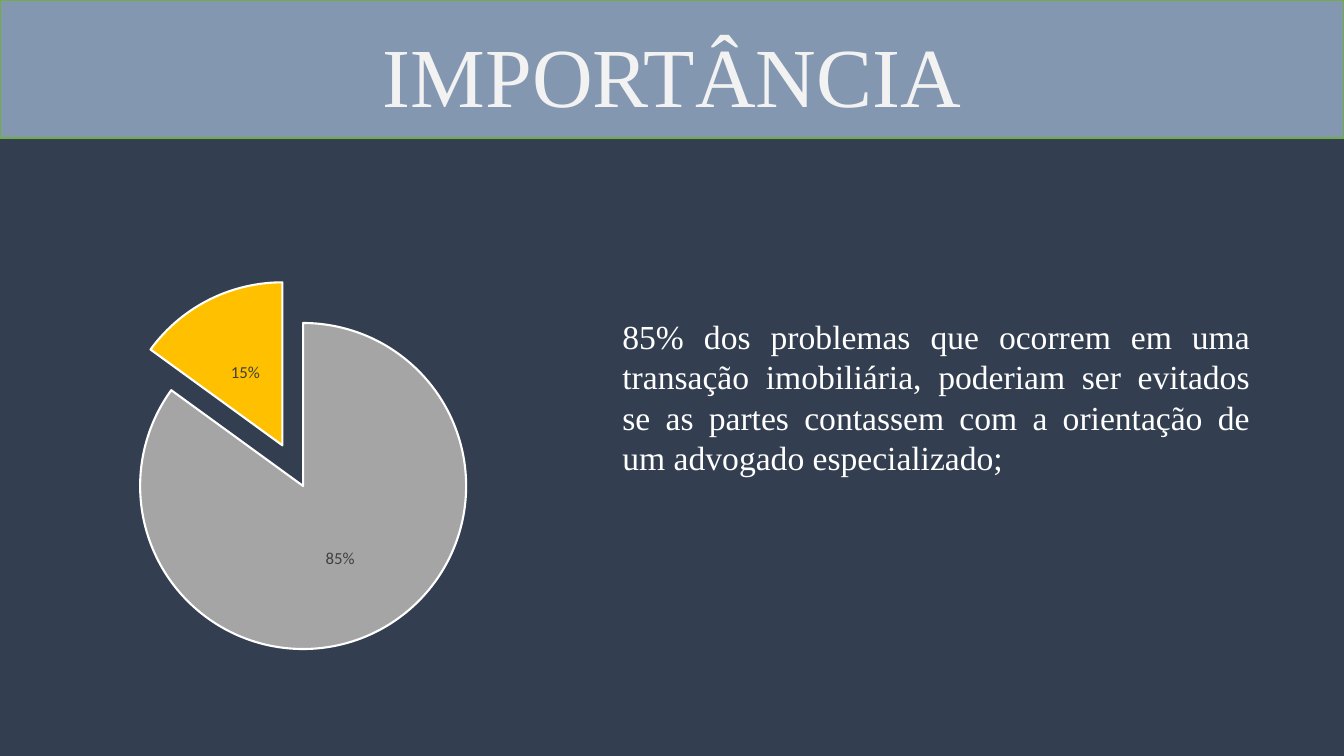
"""Build the IMPORTÂNCIA slide with a title band, an exploded pie and a statement."""
import pptx
import pptx.chart.data
import pptx.dml.color
import pptx.enum.chart
import pptx.enum.shapes
import pptx.enum.text
import pptx.util

Pt = pptx.util.Pt
RGBColor = pptx.dml.color.RGBColor
ALIGN = pptx.enum.text.PP_ALIGN
ANCHOR = pptx.enum.text.MSO_ANCHOR

NAVY = RGBColor(0x33, 0x3F, 0x50)
SLATE = RGBColor(0x84, 0x97, 0xB0)
GREEN = RGBColor(0x70, 0xAD, 0x47)
PALE = RGBColor(0xF2, 0xF2, 0xF2)
WHITE = RGBColor(0xFF, 0xFF, 0xFF)
LABEL_GREY = RGBColor(0x40, 0x40, 0x40)
BLUE = RGBColor(0x44, 0x72, 0xC4)
ORANGE = RGBColor(0xED, 0x7D, 0x31)
GREY = RGBColor(0xA5, 0xA5, 0xA5)
GOLD = RGBColor(0xFF, 0xC0, 0x00)


def write_text(shape, text, size, color, align, anchor, line_spacing=1.0):
    frame = shape.text_frame
    frame.word_wrap = True
    frame.auto_size = pptx.enum.text.MSO_AUTO_SIZE.NONE
    frame.vertical_anchor = anchor
    paragraph = frame.paragraphs[0]
    paragraph.alignment = align
    paragraph.line_spacing = line_spacing
    run = paragraph.add_run()
    run.text = text
    run.font.name = "Times New Roman"
    run.font.size = Pt(size)
    run.font.color.rgb = color


presentation = pptx.Presentation()
presentation.slide_width = Pt(960)
presentation.slide_height = Pt(540)
slide = presentation.slides.add_slide(presentation.slide_layouts[5])
slide.background.fill.solid()
slide.background.fill.fore_color.rgb = NAVY

band = slide.shapes.add_shape(
    pptx.enum.shapes.MSO_SHAPE.RECTANGLE, Pt(0), Pt(0), Pt(960), Pt(98.6))
band.shadow.inherit = False
band.fill.solid()
band.fill.fore_color.rgb = SLATE
band.line.color.rgb = GREEN
band.line.width = Pt(1)

title = slide.shapes.title
title.left, title.top, title.width, title.height = Pt(120), Pt(-94.3), Pt(720), Pt(188)
write_text(title, "IMPORTÂNCIA", 60, PALE, ALIGN.CENTER, ANCHOR.BOTTOM, line_spacing=0.9)
band.element.addnext(title.element)

chart_data = pptx.chart.data.CategoryChartData()
chart_data.categories = ["1", "2", "3", "4"]
chart_data.add_series("Series 1", [None, None, 85, 15])
chart = slide.shapes.add_chart(
    pptx.enum.chart.XL_CHART_TYPE.PIE_EXPLODED,
    Pt(-24.5), Pt(172), Pt(462), Pt(311), chart_data).chart
chart.has_legend = False
chart.has_title = False
chart.font.name = "Calibri"
chart.font.size = Pt(10)

plot = chart.plots[0]
plot.vary_by_categories = True
series = plot.series[0]
for index, (color, explosion) in enumerate(
        [(BLUE, 9), (ORANGE, 9), (GREY, 19), (GOLD, 9)]):
    slice_format = series.points[index].format
    slice_format.fill.solid()
    slice_format.fill.fore_color.rgb = color
    slice_format.line.color.rgb = WHITE
    slice_format.line.width = Pt(1.5)
    point = series.points[index]._element.xpath(f"c:dPt[c:idx/@val='{index}']")[0]
    for old_explosion in point.xpath("c:explosion"):
        point.remove(old_explosion)
    explosion_element = pptx.oxml.parse_xml(
        '<c:explosion xmlns:c="http://schemas.openxmlformats.org/drawingml/2006/chart"'
        f' val="{explosion}"/>')
    point.xpath("c:spPr")[0].addprevious(explosion_element)

plot.has_data_labels = True
labels = plot.data_labels
labels.show_value = False
labels.show_percentage = True
labels.number_format = "0%"
labels.number_format_is_linked = False
labels.position = pptx.enum.chart.XL_LABEL_POSITION.CENTER
labels.font.name = "Calibri"
labels.font.size = Pt(12)
labels.font.color.rgb = LABEL_GREY

statement = slide.shapes.add_textbox(Pt(437.5), Pt(222), Pt(462.5), Pt(167))
write_text(
    statement,
    "85% dos problemas que ocorrem em uma transação imobiliária, poderiam ser evitados "
    "se as partes contassem com a orientação de um advogado especializado;",
    24, WHITE, ALIGN.JUSTIFY, ANCHOR.TOP)

presentation.save("out.pptx")
